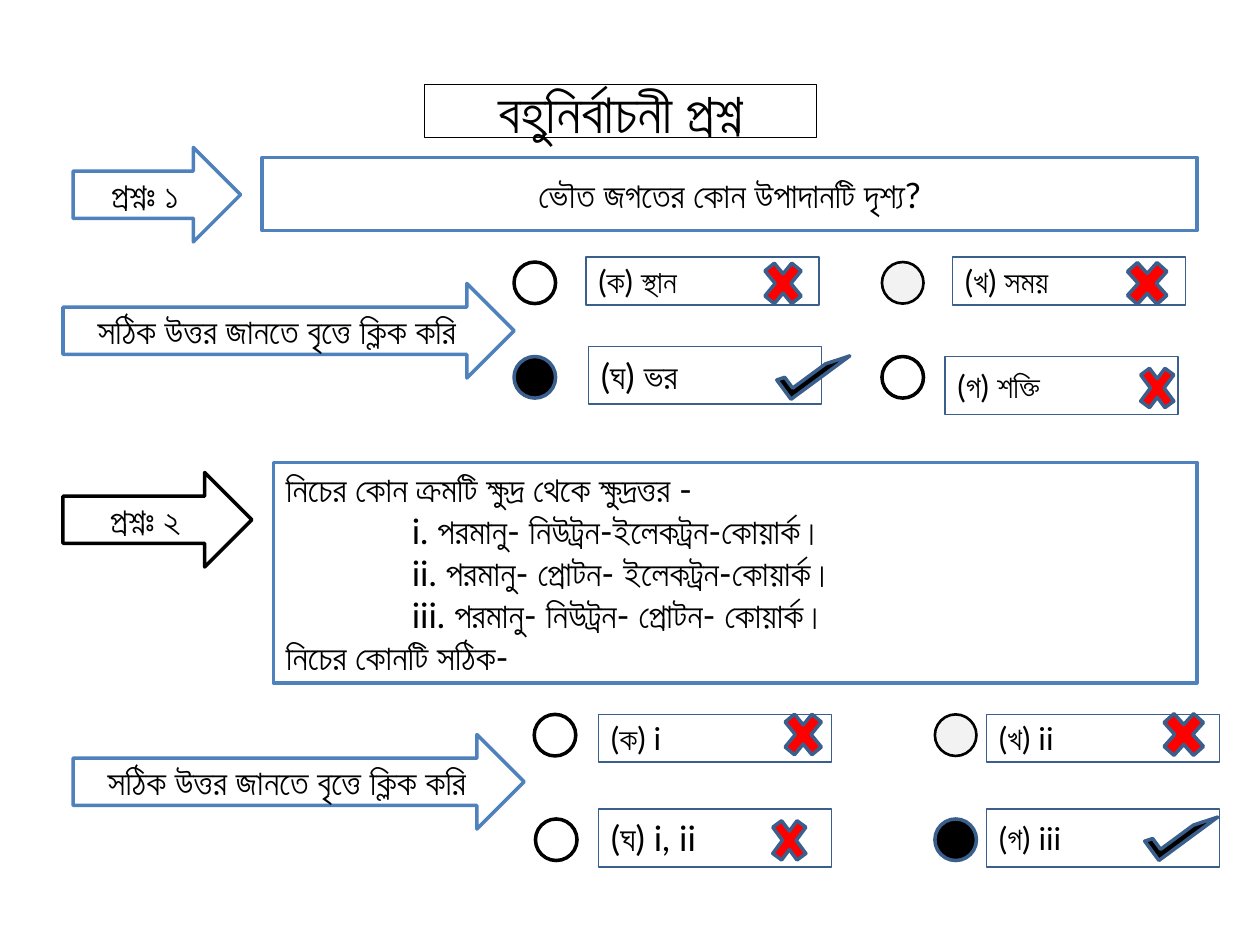
from pptx import Presentation
from pptx.dml.color import RGBColor
from pptx.enum.shapes import MSO_SHAPE
from pptx.enum.text import MSO_ANCHOR, PP_ALIGN
from pptx.util import Inches, Pt

BLACK = RGBColor(0x00, 0x00, 0x00)
WHITE = RGBColor(0xFF, 0xFF, 0xFF)
GREY = RGBColor(0xF2, 0xF2, 0xF2)
RED = RGBColor(0xFF, 0x00, 0x00)
BLUE = RGBColor(0x4F, 0x81, 0xBD)
NAVY = RGBColor(0x3A, 0x5F, 0x8C)

deck = Presentation()
deck.slide_width = Inches(10)
deck.slide_height = Inches(7.5)
slide = deck.slides.add_slide(deck.slide_layouts[6])


def draw(kind, box, fill, line, width):
    shape = slide.shapes.add_shape(kind, *[Inches(v) for v in box])
    shape.shadow.inherit = False
    if fill is None:
        shape.fill.background()
    else:
        shape.fill.solid()
        shape.fill.fore_color.rgb = fill
    shape.line.color.rgb = line
    shape.line.width = Pt(width)
    return shape


def write(shape, lines, size, align=PP_ALIGN.LEFT):
    frame = shape.text_frame
    frame.word_wrap = True
    frame.vertical_anchor = MSO_ANCHOR.MIDDLE
    for i, text in enumerate(lines):
        para = frame.add_paragraph() if i else frame.paragraphs[0]
        para.alignment = align
        run = para.add_run()
        run.text = text
        run.font.size = Pt(size)
        run.font.name = "Lato"
        run.font.color.rgb = BLACK


# Title
title = draw(MSO_SHAPE.RECTANGLE, (3.37, 0.67, 3.11, 0.42), None, BLACK, 0.75)
write(title, ["বহুনির্বাচনী প্রশ্ন"], 32, PP_ALIGN.CENTER)

# Question boxes
first = draw(MSO_SHAPE.RECTANGLE, (2.08, 1.25, 7.42, 0.58), WHITE, BLUE, 2)
write(first, ["ভৌত জগতের কোন উপাদানটি দৃশ্য?"], 20, PP_ALIGN.CENTER)

second = draw(MSO_SHAPE.RECTANGLE, (2.17, 3.67, 7.33, 1.75), WHITE, BLUE, 2)
write(second, [
    "নিচের কোন ক্রমটি ক্ষুদ্র থেকে ক্ষুদ্রত্তর -",
    "i. পরমানু- নিউট্রন-ইলেকট্রন-কোয়ার্ক।",
    "ii. পরমানু- প্রোটন- ইলেকট্রন-কোয়ার্ক।",
    "iii. পরমানু- নিউট্রন- প্রোটন- কোয়ার্ক।",
    "নিচের কোনটি সঠিক-",
], 20)
for para in second.text_frame.paragraphs[1:4]:
    para._p.get_or_add_pPr().set("marL", str(Inches(1)))

# Arrows: question numbers and hints
HINT = "সঠিক উত্তর জানতে বৃত্তে ক্লিক করি"
arrows = [
    (0.58, 1.17, 1.33, BLUE, "প্রশ্নঃ ১"),
    (0.5, 2.25, 3.58, BLUE, HINT),
    (0.5, 3.75, 1.5, BLACK, "প্রশ্নঃ ২"),
    (0.58, 5.83, 3.58, BLUE, HINT),
]
for x, y, wide, line, text in arrows:
    arrow = draw(MSO_SHAPE.RIGHT_ARROW, (x, y, wide, 0.75), WHITE, line, 2)
    write(arrow, [text], 20, PP_ALIGN.CENTER)

# Options: text, size, box (x, y, height), circle (x, y, fill), mark (x, y, width)
# A black circle stands for the right answer and gets a tick
options = [
    ("(ক) স্থান", 18, (4.65, 2.04, 0.38), (4.08, 2.08, WHITE), (6.01, 2, 0.41)),
    ("(খ) সময়", 18, (7.56, 2.04, 0.38), (7, 2.08, GREY), (8.88, 2, 0.45)),
    ("(ঘ) ভর", 20, (4.67, 2.75, 0.46), (4.08, 2.83, BLACK), (6.36, 2.63, 0.19)),
    ("(গ) শক্তি", 18, (7.5, 2.83, 0.46), (7, 2.83, WHITE), (9, 2.83, 0.37)),
    ("(ক) i", 18, (4.75, 5.67, 0.38), (4.24, 5.67, WHITE), (6.17, 5.58, 0.41)),
    ("(খ) ii", 18, (7.83, 5.67, 0.38), (7.42, 5.67, GREY), (9.17, 5.58, 0.45)),
    ("(ঘ) i, ii", 20, (4.75, 6.42, 0.46), (4.25, 6.5, WHITE), (6.08, 6.42, 0.37)),
    ("(গ) iii", 18, (7.83, 6.42, 0.46), (7.42, 6.5, BLACK), (9.28, 6.29, 0.19)),
]
for text, size, (x, y, high), (cx, cy, fill), (mx, my, wide) in options:
    right = fill == BLACK
    draw(MSO_SHAPE.OVAL, (cx, cy, 0.33, 0.33), fill,
         NAVY if right else BLACK, 1.5 if fill == GREY else 2)
    box = draw(MSO_SHAPE.RECTANGLE, (x, y, 1.85, high), None, NAVY, 1)
    write(box, [text], size)
    if right:
        tick = draw(MSO_SHAPE.HALF_FRAME, (mx, my, wide, 0.58), BLACK, NAVY, 2)
        tick.rotation = 233.6
    else:
        draw(MSO_SHAPE.MATH_MULTIPLY, (mx, my, wide, 0.5), RED, NAVY, 2)

deck.save("out.pptx")
